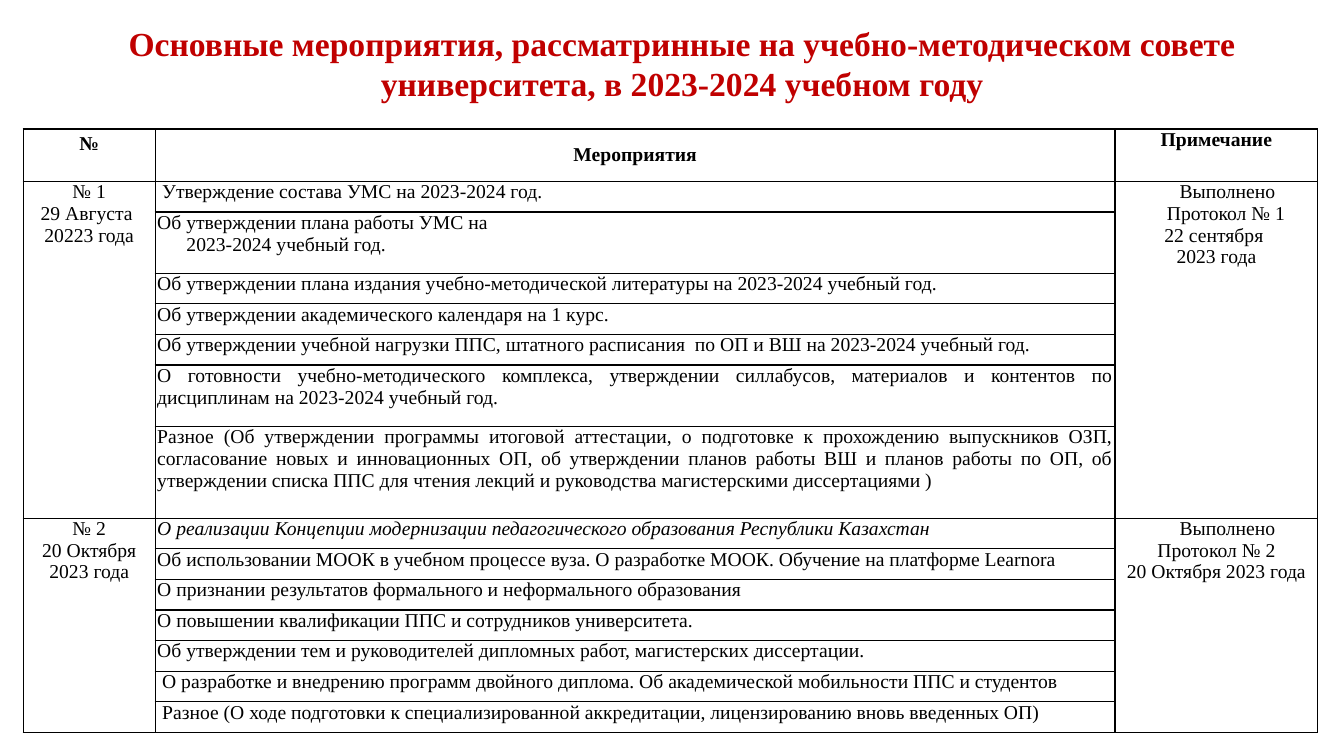
from lxml import etree
from pptx import Presentation
from pptx.dml.color import RGBColor
from pptx.enum.text import MSO_ANCHOR, MSO_AUTO_SIZE, PP_ALIGN
from pptx.oxml.ns import qn
from pptx.util import Inches, Pt

CENTER, JUSTIFY = PP_ALIGN.CENTER, PP_ALIGN.JUSTIFY
TOP, MIDDLE = MSO_ANCHOR.TOP, MSO_ANCHOR.MIDDLE
FONT = "Times New Roman"
BLACK, RED = "000000", "C00000"
TITLE_ONLY_LAYOUT = 5
COLUMN_WIDTHS = [1.31, 9.52, 2.01]
HEADER_HEIGHT = 0.52
BODY_HEIGHT = 5.47

TITLE = ("Основные мероприятия, рассматринные на учебно-методическом совете "
         "университета, в 2023-2024 учебном году")

# Each line is (text, left indent in inches); each topic is (lines, height in units, italic).
MEETINGS = [
    {
        "date": [("№ 1", 0), ("29 Августа ", 0), ("20223 года", 0)],
        "topics": [
            ([(" Утверждение состава УМС на 2023-2024 год.", 0)], 1, False),
            ([("Об утверждении плана работы УМС на", 0),
              ("2023-2024 учебный год.", 0.29)], 2, False),
            ([("Об утверждении плана издания учебно-методической литературы "
               "на 2023-2024 учебный год.", 0)], 1, False),
            ([("Об утверждении академического календаря на 1 курс.", 0)], 1, False),
            ([("Об утверждении учебной нагрузки ППС, штатного расписания  по ОП и ВШ "
               "на 2023-2024 учебный год.", 0)], 1, False),
            ([("О готовности учебно-методического комплекса, утверждении силлабусов, "
               "материалов и контентов по дисциплинам на 2023-2024 учебный год.", 0)], 2, False),
            ([("Разное (Об утверждении программы итоговой аттестации, о подготовке к "
               "прохождению выпускников ОЗП, согласование новых и инновационных ОП, "
               "об утверждении планов работы ВШ и планов работы по ОП, об утверждении "
               "списка ППС для чтения лекций и руководства магистерскими "
               "диссертациями )", 0)], 3, False),
        ],
        "note": [("Выполнено", 0.22), ("Протокол № 1", 0.19),
                 ("22 сентября ", 0), ("2023 года", 0)],
    },
    {
        "date": [("№ 2", 0), ("20 Октября 2023 года", 0)],
        "topics": [
            ([("О реализации Концепции модернизации педагогического образования "
               "Республики Казахстан", 0)], 1, True),
            ([("Об использовании МООК в учебном процессе вуза. О разработке МООК. "
               "Обучение на платформе Learnora", 0)], 1, False),
            ([("О признании результатов формального и неформального образования", 0)], 1, False),
            ([("О повышении квалификации ППС и сотрудников университета.", 0)], 1, False),
            ([("Об утверждении тем и руководителей дипломных работ, магистерских "
               "диссертации.", 0)], 1, False),
            ([(" О разработке и внедрению программ двойного диплома. Об академической "
               "мобильности ППС и студентов", 0)], 1, False),
            ([(" Разное (О ходе подготовки к специализированной аккредитации, "
               "лицензированию вновь введенных ОП)", 0)], 1, False),
        ],
        "note": [("Выполнено", 0.22), ("Протокол № 2", 0), ("20 Октября 2023 года", 0)],
    },
]


def color(hex_value):
    return RGBColor.from_string(hex_value)


def add_run(paragraph, text, size, hex_value, bold=False, italic=False):
    run = paragraph.add_run()
    run.text = text
    run.font.name = FONT
    run.font.size = Pt(size)
    run.font.bold = bold
    run.font.italic = italic
    run.font.color.rgb = color(hex_value)


def add_title(slide):
    title = slide.shapes.title
    title.left, title.top = Inches(0.81), Inches(0.17)
    title.width, title.height = Inches(11.91), Inches(0.91)
    frame = title.text_frame
    frame.word_wrap = True
    frame.auto_size = MSO_AUTO_SIZE.NONE
    frame.vertical_anchor = MIDDLE
    paragraph = frame.paragraphs[0]
    paragraph.alignment = CENTER
    add_run(paragraph, TITLE, 24, RED, bold=True)


def format_cell(cell):
    cell.margin_left = cell.margin_right = Inches(0.02)
    cell.margin_top = cell.margin_bottom = 0
    properties = cell._tc.get_or_add_tcPr()
    for side in ("a:lnL", "a:lnR", "a:lnT", "a:lnB"):
        line = etree.SubElement(properties, qn(side), w=str(Pt(1)))
        fill = etree.SubElement(line, qn("a:solidFill"))
        etree.SubElement(fill, qn("a:srgbClr"), val=BLACK)
    cell.fill.background()


def write_cell(cell, lines, alignment, anchor=TOP, bold=False, italic=False):
    cell.vertical_anchor = anchor
    frame = cell.text_frame
    for index, (text, indent) in enumerate(lines):
        paragraph = frame.add_paragraph() if index else frame.paragraphs[0]
        paragraph.alignment = alignment
        if indent:
            paragraph._p.get_or_add_pPr().set("marL", str(Inches(indent)))
        add_run(paragraph, text, 14, BLACK, bold, italic)


def add_meeting(table, first_row, meeting):
    last_row = first_row + len(meeting["topics"]) - 1
    for column, key in ((0, "date"), (2, "note")):
        table.cell(first_row, column).merge(table.cell(last_row, column))
        write_cell(table.cell(first_row, column), meeting[key], CENTER)
    for row, (lines, _, italic) in enumerate(meeting["topics"], first_row):
        write_cell(table.cell(row, 1), lines, JUSTIFY, italic=italic)
    return last_row + 1


def add_events_table(slide):
    units = [topic[1] for meeting in MEETINGS for topic in meeting["topics"]]
    frame = slide.shapes.add_table(
        len(units) + 1, len(COLUMN_WIDTHS), Inches(0.23), Inches(1.28),
        Inches(sum(COLUMN_WIDTHS)), Inches(HEADER_HEIGHT + BODY_HEIGHT))
    table = frame.table
    table.first_row = table.horz_banding = False
    for column, width in zip(table.columns, COLUMN_WIDTHS):
        column.width = Inches(width)
    heights = [HEADER_HEIGHT] + [BODY_HEIGHT * unit / sum(units) for unit in units]
    for row, height in zip(table.rows, heights):
        row.height = Inches(height)
    for cell in table.iter_cells():
        format_cell(cell)

    headers = [("№", TOP), ("Мероприятия", MIDDLE), ("Примечание", TOP)]
    for column, (text, anchor) in enumerate(headers):
        write_cell(table.cell(0, column), [(text, 0)], CENTER, anchor, bold=True)
    table.cell(0, 0).margin_top = Inches(0.04)
    next_row = 1
    for meeting in MEETINGS:
        next_row = add_meeting(table, next_row, meeting)


def main():
    presentation = Presentation()
    presentation.slide_width, presentation.slide_height = Inches(13.33), Inches(7.5)
    slide = presentation.slides.add_slide(presentation.slide_layouts[TITLE_ONLY_LAYOUT])
    add_title(slide)
    add_events_table(slide)
    presentation.save("out.pptx")


if __name__ == "__main__":
    main()
